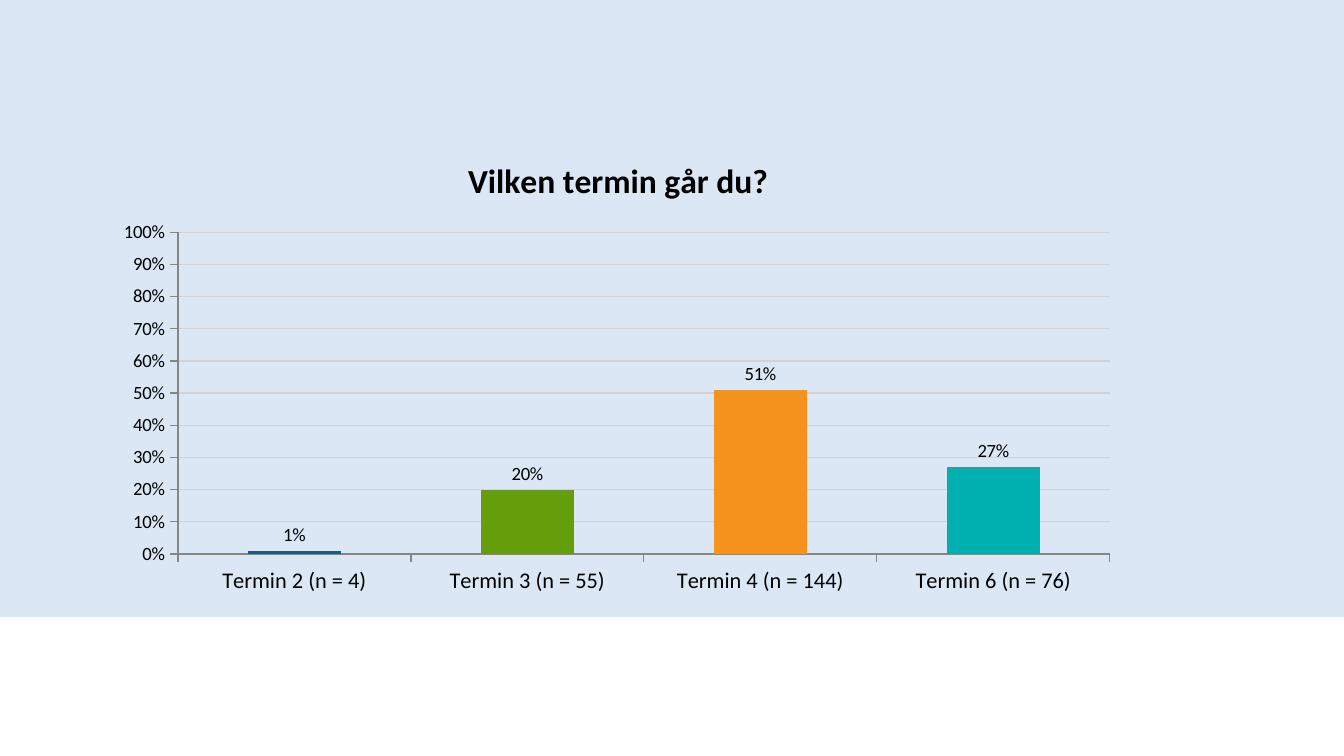
from lxml import etree
from pptx import Presentation
from pptx.chart.data import CategoryChartData
from pptx.dml.color import RGBColor
from pptx.enum import chart as ch, shapes
from pptx.oxml.ns import qn
from pptx.util import Inches, Pt

TITLE = "Vilken termin går du?"
TERMS = [
    ("Termin 2 (n = 4)", 0.01, "blue"),
    ("Termin 3 (n = 55)", 0.2, "green"),
    ("Termin 4 (n = 144)", 0.51, "orange"),
    ("Termin 6 (n = 76)", 0.27, "teal"),
]
COLORS = {
    "panel": "DCE7F6", "text": "000000", "grid": "D3D3D3", "axis": "868686",
    "blue": "006699", "green": "649E0B", "orange": "F6921E", "teal": "00AFAF",
}
PLOT = {"x": 0.07, "y": 0.21, "w": 0.91, "h": 0.69}
FONT = "Calibri"


def rgb(name):
    return RGBColor.from_string(COLORS[name])


def style(font, size, bold=False):
    font.name = FONT
    font.size = Pt(size)
    font.bold = bold
    font.color.rgb = rgb("text")


def paint(fmt, name):
    fmt.fill.solid()
    fmt.fill.fore_color.rgb = rgb(name)


def place_plot(chart):
    area = chart._chartSpace.chart.plotArea
    for old in area.findall(qn("c:layout")):
        area.remove(old)
    layout = etree.Element(qn("c:layout"))
    area.insert(0, layout)
    manual = etree.SubElement(layout, qn("c:manualLayout"))
    settings = [("layoutTarget", "inner"), ("xMode", "edge"), ("yMode", "edge")]
    for tag, val in settings + list(PLOT.items()):
        etree.SubElement(manual, qn("c:" + tag)).set("val", str(val))


prs = Presentation()
prs.slide_width = Inches(10)
prs.slide_height = prs.slide_width * 9 // 16
s = prs.slides.add_slide(prs.slide_layouts[6])

panel = s.shapes.add_shape(shapes.MSO_SHAPE.RECTANGLE, 0, 0, prs.slide_width, Inches(4.59))
panel.shadow.inherit = False
paint(panel, "panel")
panel.line.fill.background()

data = CategoryChartData(number_format="0%")
data.categories = [label for label, _, _ in TERMS]
data.add_series("Series 1", [value for _, value, _ in TERMS])
chart = s.shapes.add_chart(
    ch.XL_CHART_TYPE.COLUMN_CLUSTERED,
    Inches(0.79), Inches(1), Inches(7.62), Inches(3.47), data,
).chart
style(chart.font, 18)
chart.has_legend = False
chart.has_title = True
r = chart.chart_title.text_frame.paragraphs[0].add_run()
r.text = TITLE
style(r.font, 18, True)
chart.chart_title.include_in_layout = False
place_plot(chart)

for axis, size in ((chart.category_axis, 12), (chart.value_axis, 10)):
    style(axis.tick_labels.font, size)
    axis.major_tick_mark = ch.XL_TICK_MARK.OUTSIDE
    axis.minor_tick_mark = ch.XL_TICK_MARK.NONE
    axis.format.line.color.rgb = rgb("axis")

values = chart.value_axis
values.minimum_scale, values.maximum_scale, values.major_unit = 0, 1, 0.1
values.tick_labels.number_format = "0%"
values.tick_labels.number_format_is_linked = False
values.has_major_gridlines = True
values.major_gridlines.format.line.color.rgb = rgb("grid")
values.major_gridlines.format.line.width = Pt(0.75)

plot = chart.plots[0]
plot.gap_width = 150
plot.vary_by_categories = False
plot.has_data_labels = True
labels = plot.data_labels
labels.show_value = True
labels.position = ch.XL_LABEL_POSITION.OUTSIDE_END
labels.number_format = "0%"
labels.number_format_is_linked = False
style(labels.font, 10)

series = plot.series[0]
paint(series.format, TERMS[0][2])
for i, (_, _, color) in enumerate(TERMS[1:], 1):
    paint(series.points[i].format, color)

prs.save("out.pptx")
